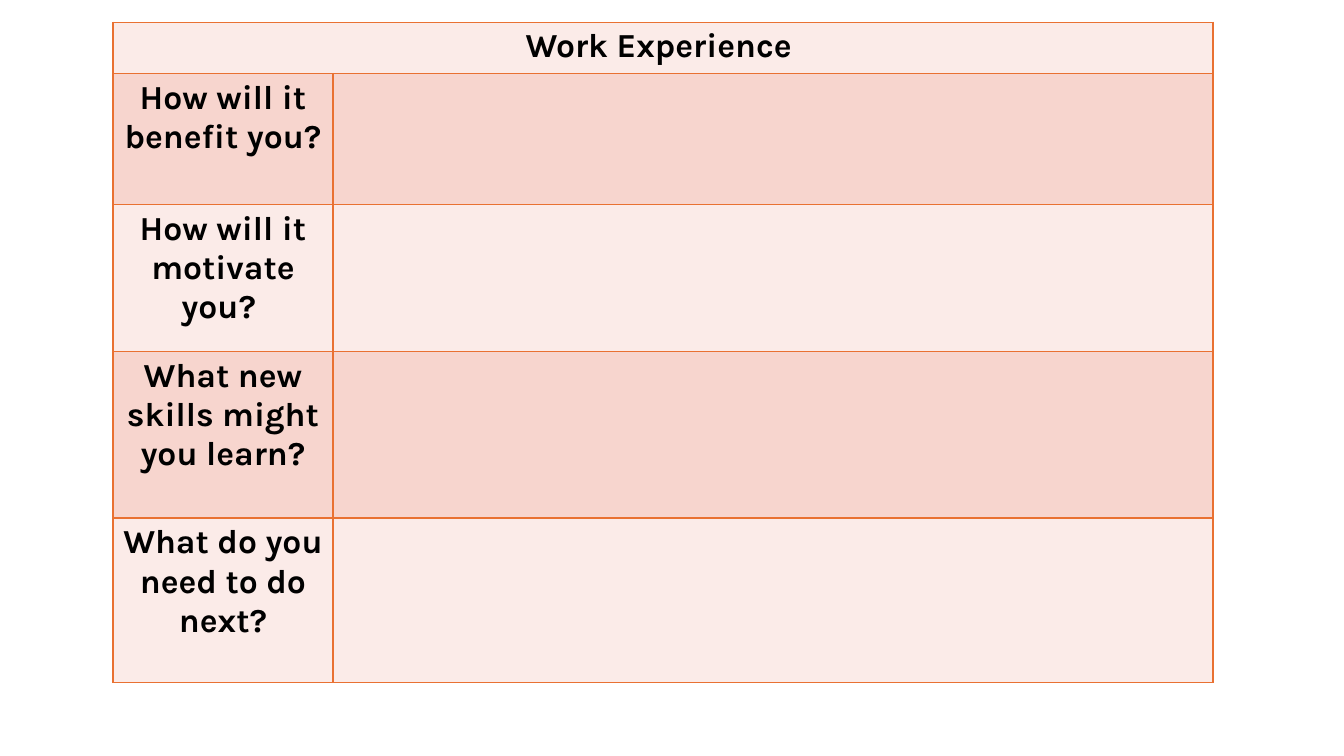
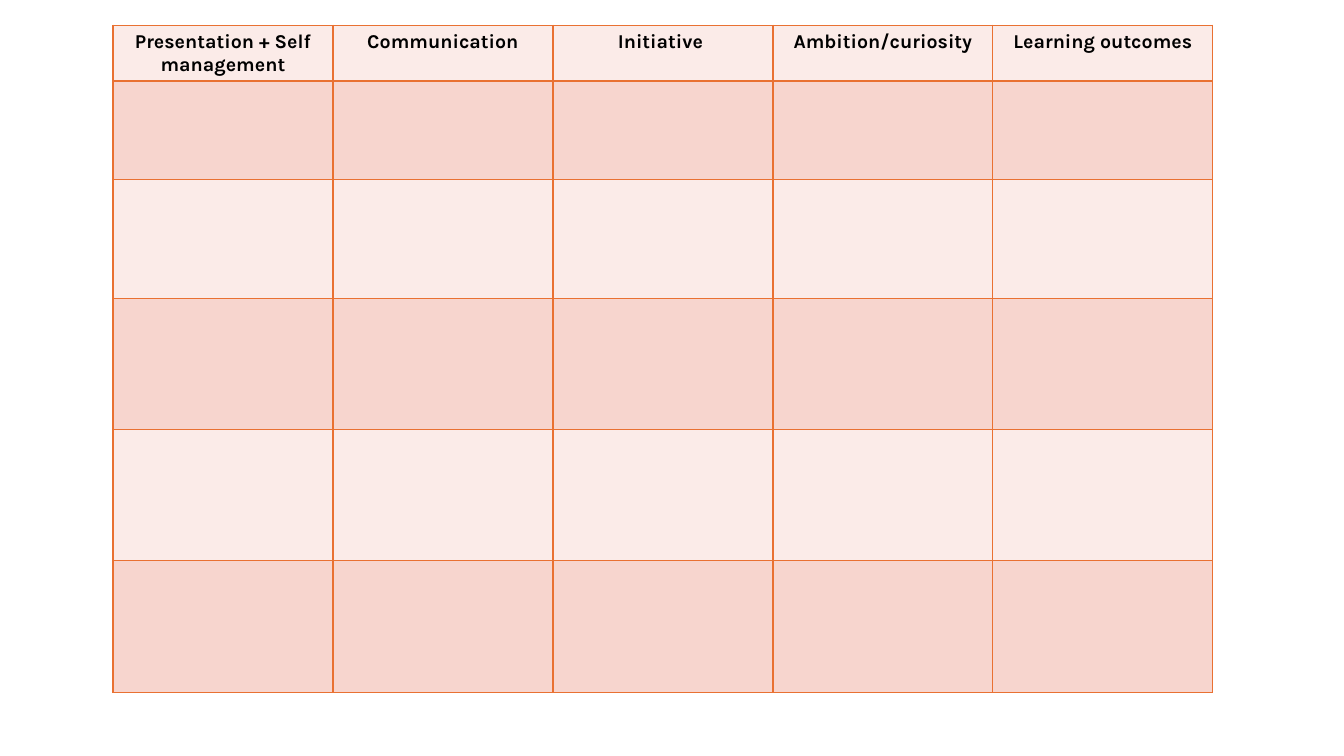
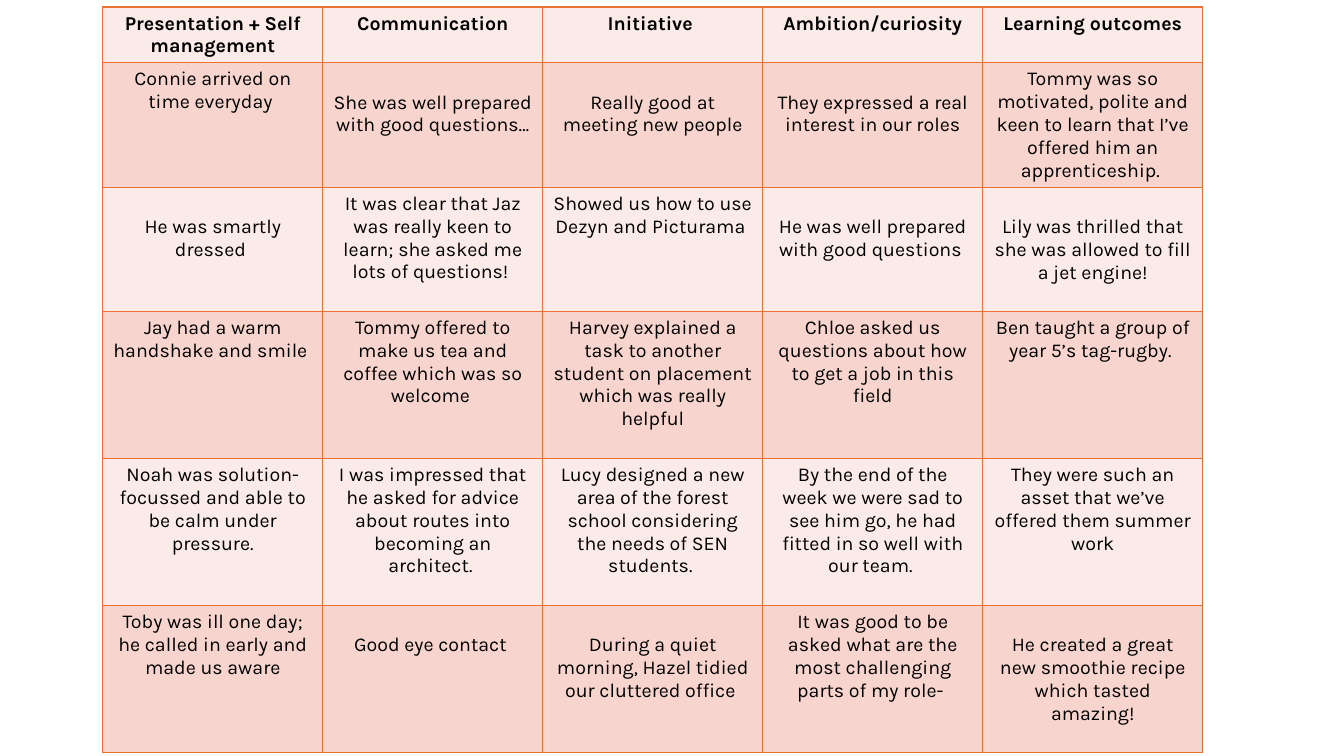
from dataclasses import dataclass

from lxml import etree
from pptx import Presentation
from pptx.dml.color import RGBColor
from pptx.enum.text import PP_ALIGN
from pptx.oxml.ns import qn
from pptx.util import Inches, Pt

CENTER = PP_ALIGN.CENTER


@dataclass(frozen=True)
class Theme:
    font: str = "Karla"
    ink: str = "000000"
    border: str = "E97132"
    bands: tuple = ("FBEBE8", "F7D5CE")
    large: int = 24
    small: int = 14
    border_width: int = 1
    cell_margin: float = 0.05
    blank_line: float = 0.23
    table_width: float = 10.91


theme = Theme()

presentation = Presentation()
presentation.slide_width = Inches(13.33)
presentation.slide_height = Inches(7.5)
blank_layout = presentation.slide_layouts[6]


def add_banded_table(left, top, column_shares, row_heights):
    """Add a slide with one bordered table whose rows alternate in colour."""
    slide = presentation.slides.add_slide(blank_layout)
    table = slide.shapes.add_table(
        len(row_heights), len(column_shares), Inches(left), Inches(top),
        Inches(theme.table_width), Inches(sum(row_heights))).table
    table.first_row = False
    table.horz_banding = False
    for column, share in zip(table.columns, column_shares):
        column.width = Inches(theme.table_width * share / sum(column_shares))
    for row_index, (row, height) in enumerate(zip(table.rows, row_heights)):
        row.height = Inches(height)
        for cell in row.cells:
            cell.fill.solid()
            cell.fill.fore_color.rgb = RGBColor.from_string(theme.bands[row_index % 2])
            properties = cell._tc.get_or_add_tcPr()
            for position, side in enumerate(("lnL", "lnR", "lnT", "lnB")):
                line = etree.Element(qn(f"a:{side}"), w=str(Pt(theme.border_width)))
                fill = etree.SubElement(line, qn("a:solidFill"))
                etree.SubElement(fill, qn("a:srgbClr"), val=theme.border)
                properties.insert(position, line)
    return table


def write_cell(cell, text, size, bold, lowered=False):
    """Write centred text, one line lower if asked."""
    cell.margin_top = Inches(theme.cell_margin + theme.blank_line * lowered)
    paragraph = cell.text_frame.paragraphs[0]
    paragraph.alignment = CENTER
    run = paragraph.add_run()
    run.text = text
    run.font.name = theme.font
    run.font.size = Pt(size)
    run.font.bold = bold
    run.font.color.rgb = RGBColor.from_string(theme.ink)


# Slide 1: questions about work experience
questions = (
    "How will it benefit you?",
    "How will it motivate you? ",
    "What new skills might you learn?",
    "What do you need to do next?",
)
question_table = add_banded_table(1.12, 0.22, (1, 4), (0.51, 1.3, 1.46, 1.65, 1.63))
question_table.cell(0, 0).merge(question_table.cell(0, 1))
write_cell(question_table.cell(0, 0), "Work Experience ", theme.large, True)
for row_index, question in enumerate(questions, start=1):
    write_cell(question_table.cell(row_index, 0), question, theme.large, True)

# Slides 2 and 3: the same five skills, first empty, then with feedback
skills = (
    "Presentation + Self management",
    "Communication",
    "Initiative ",
    "Ambition/curiosity",
    "Learning outcomes",
)
equal_columns = (1,) * len(skills)
empty_table = add_banded_table(1.12, 0.25, equal_columns, (0.55, 0.98, 1.18, 1.3, 1.3, 1.31))
feedback_table = add_banded_table(1.02, 0.07, equal_columns, (0.55, 1.23, 1.23, 1.46, 1.46, 1.46))
for skill_table in (empty_table, feedback_table):
    for column_index, skill in enumerate(skills):
        write_cell(skill_table.cell(0, column_index), skill, theme.small, True)

# Slide 3: feedback, row by row
feedback = (
    (
        "Connie arrived on time everyday ",
        "She was well prepared with good questions…",
        "Really good at meeting new people",
        "They expressed a real interest in our roles",
        "Tommy was so motivated, polite and keen to learn that I’ve offered him an apprenticeship. ",
    ),
    (
        "He was smartly dressed ",
        "It was clear that Jaz was really keen to learn; she asked me lots of questions! ",
        "Showed us how to use Dezyn and Picturama ",
        "He was well prepared with good questions ",
        "Lily was thrilled that she was allowed to fill a jet engine!",
    ),
    (
        "Jay had a warm handshake and smile ",
        "Tommy offered to make us tea and coffee which was so welcome ",
        "Harvey explained a task to another student on placement which was really helpful",
        "Chloe asked us questions about how to get a job in this field",
        "Ben taught a group of year 5’s tag-rugby. ",
    ),
    (
        "Noah was solution- focussed and able to be calm under pressure.",
        "I was impressed that he asked for advice about routes into becoming an architect. ",
        "Lucy designed a new area of the forest school considering the needs of SEN students. ",
        "By the end of the week we were sad to see him go, he had fitted in so well with our team. ",
        "They were such an asset that we’ve offered them summer work",
    ),
    (
        "Toby was ill one day; he called in early and made us aware",
        "Good eye contact ",
        "During a quiet morning, Hazel tidied our cluttered office ",
        "It was good to be asked what are the most challenging parts of my role- ",
        "He created a great new smoothie recipe which tasted amazing!",
    ),
)
# Columns whose text starts one line lower, for each feedback row
lowered_columns = ((1, 2, 3), (0, 3, 4), (), (), (1, 2, 4))
for row_index, (comments, lowered) in enumerate(zip(feedback, lowered_columns), start=1):
    for column_index, comment in enumerate(comments):
        write_cell(feedback_table.cell(row_index, column_index), comment,
                   theme.small, False, column_index in lowered)

presentation.save("out.pptx")
